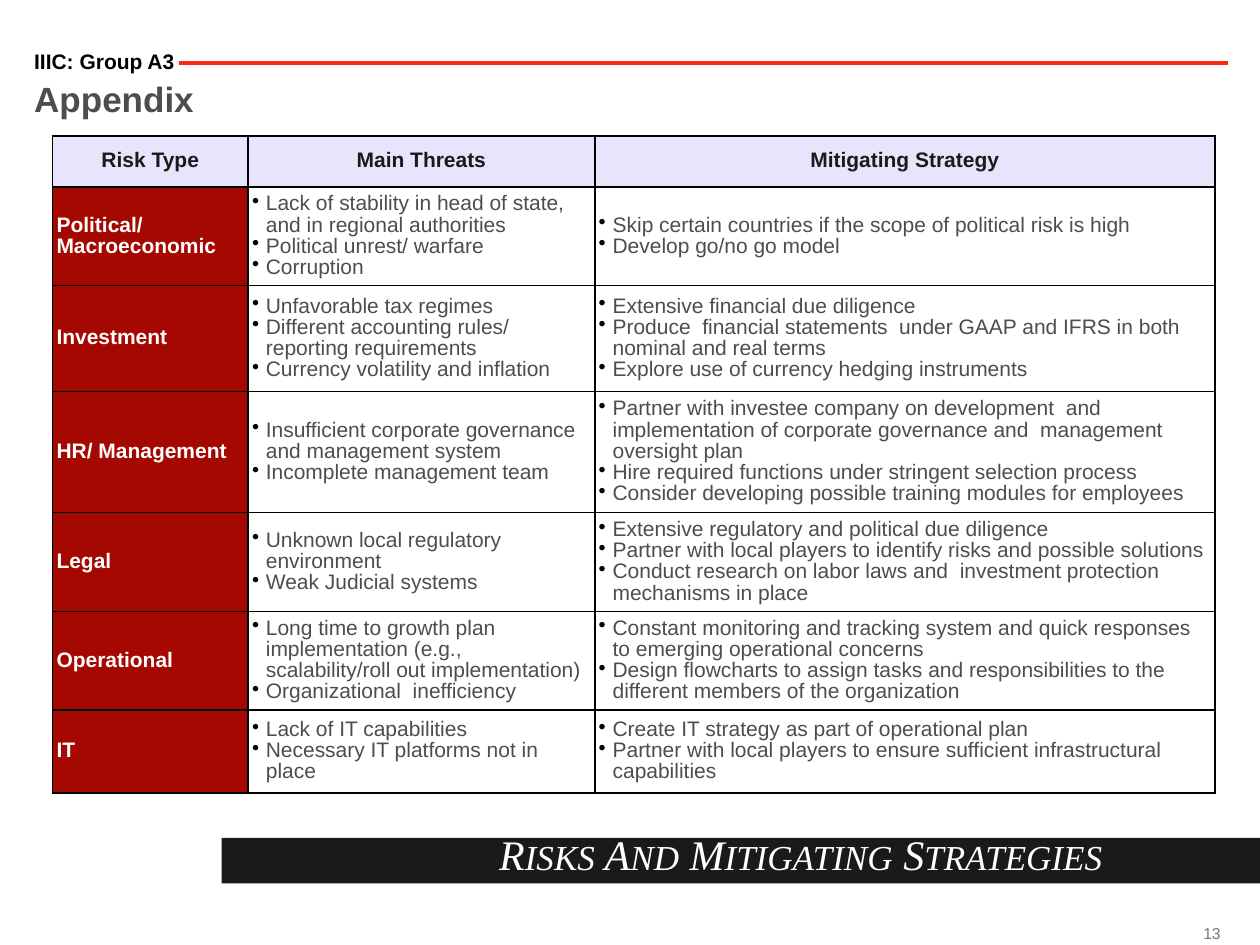
from dataclasses import dataclass

from lxml import etree
from pptx import Presentation
from pptx.dml import color
from pptx.enum import shapes, text
from pptx.oxml import ns
from pptx.util import Cm, Pt


@dataclass(frozen=True)
class Theme:
    sans: str = "Arial"
    serif: str = "Times New Roman"
    black: str = "000000"
    white: str = "FFFFFF"
    ink: str = "1A1A1A"
    grey: str = "4D4D4D"
    pale: str = "77787B"
    red: str = "FF2712"
    dark_red: str = "A40800"
    lilac: str = "E6E5FB"
    small: int = 9
    body: int = 12
    title: int = 20
    cap: int = 24
    edge: int = 1
    rule: float = 2.25
    lead: float = 0.9


THEME = Theme()
ALIGN = text.PP_ALIGN
WIDTHS = (3.94, 6.99, 12.5)
HEIGHTS = (1.03, 1.85, 2.13, 2.34, 1.85, 1.85, 1.67)
HEADS = ("Risk Type", "Main Threats", "Mitigating Strategy")
RISKS = (
    ("Political/ Macroeconomic",
     ("Lack of stability in head of state, and in regional authorities",
      "Political unrest/ warfare",
      "Corruption"),
     ("Skip certain countries if the scope of political risk is high",
      "Develop go/no go model")),
    ("Investment",
     ("Unfavorable tax regimes",
      "Different accounting rules/ reporting requirements",
      "Currency volatility and inflation"),
     ("Extensive financial due diligence",
      "Produce  financial statements  under GAAP and IFRS in both nominal and real terms",
      "Explore use of currency hedging instruments")),
    ("HR/ Management",
     ("Insufficient corporate governance and management system",
      "Incomplete management team"),
     ("Partner with investee company on development  and implementation of "
      "corporate governance and  management oversight plan",
      "Hire required functions under stringent selection process",
      "Consider developing possible training modules for employees")),
    ("Legal",
     ("Unknown local regulatory environment",
      "Weak Judicial systems"),
     ("Extensive regulatory and political due diligence",
      "Partner with local players to identify risks and possible solutions",
      "Conduct research on labor laws and  investment protection mechanisms in place")),
    ("Operational",
     ("Long time to growth plan implementation (e.g., scalability/roll out implementation)",
      "Organizational  inefficiency"),
     ("Constant monitoring and tracking system and quick responses to emerging "
      "operational concerns",
      "Design flowcharts to assign tasks and responsibilities to the different "
      "members of the organization")),
    ("IT",
     ("Lack of IT capabilities",
      "Necessary IT platforms not in place"),
     ("Create IT strategy as part of operational plan",
      "Partner with local players to ensure sufficient infrastructural capabilities")),
)


def rgb(code):
    return color.RGBColor.from_string(code)


def style(run, size, tint, bold=False, face=THEME.sans):
    font = run.font
    font.name, font.size, font.bold = face, Pt(size), bold
    font.color.rgb = rgb(tint)


def add_node(parent, tag, **attrs):
    return etree.SubElement(parent, ns.qn(tag), attrs)


def add_text(slide, box, words, size, tint, bold=False, align=ALIGN.LEFT, lead=THEME.lead):
    frame = slide.shapes.add_textbox(*map(Cm, box)).text_frame
    frame.word_wrap = True
    frame.margin_left = frame.margin_right = frame.margin_top = frame.margin_bottom = 0
    frame.text = words
    para = frame.paragraphs[0]
    para.alignment, para.line_spacing = align, lead
    for run in para.runs:
        style(run, size, tint, bold)
    return frame


def add_caps(slide, box, words):
    para = add_text(slide, box, "", THEME.cap, THEME.white, align=ALIGN.RIGHT, lead=1.0).paragraphs[0]
    for i, word in enumerate(words.upper().split()):
        first = word[0] if i == 0 else " " + word[0]
        for part, size in ((first, THEME.cap), (word[1:], THEME.title)):
            run = para.add_run()
            run.text = part
            style(run, size, THEME.white, face=THEME.serif)
            run.font.italic = True


def add_band(slide, box):
    band = slide.shapes.add_shape(shapes.MSO_SHAPE.RECTANGLE, *map(Cm, box))
    band.shadow.inherit = False
    band.fill.solid()
    band.fill.fore_color.rgb = rgb(THEME.ink)
    band.line.fill.background()


def add_rule(slide, left, right, top):
    rule = slide.shapes.add_connector(
        shapes.MSO_CONNECTOR.STRAIGHT, Cm(left), Cm(top), Cm(right), Cm(top))
    rule.line.color.rgb = rgb(THEME.red)
    rule.line.width = Pt(THEME.rule)
    add_node(rule._element.spPr, "a:effectLst")


def add_edges(cell):
    props = cell._tc.get_or_add_tcPr()
    for side in ("a:lnL", "a:lnR", "a:lnT", "a:lnB"):
        edge = add_node(props, side, w=str(Pt(THEME.edge)))
        add_node(add_node(edge, "a:solidFill"), "a:srgbClr", val=THEME.black)


def add_bullet(para):
    props = para._p.get_or_add_pPr()
    props.set("marL", str(Cm(0.28)))
    props.set("indent", str(Cm(-0.28)))
    add_node(add_node(props, "a:buClr"), "a:srgbClr", val=THEME.black)
    add_node(props, "a:buChar", char="•")


def fill_cell(cell, lines, tint, back=None, bold=False, align=ALIGN.LEFT, pad=0.08, dots=False):
    add_edges(cell)
    if back:
        cell.fill.solid()
        cell.fill.fore_color.rgb = rgb(back)
    else:
        cell.fill.background()
    cell.vertical_anchor = text.MSO_ANCHOR.MIDDLE
    cell.margin_left = cell.margin_right = cell.margin_top = cell.margin_bottom = Cm(pad)
    cell.text_frame.text = "\n".join(lines)
    for para in cell.text_frame.paragraphs:
        para.alignment, para.line_spacing = align, THEME.lead
        if dots:
            add_bullet(para)
        for run in para.runs:
            style(run, THEME.body, tint, bold)


def add_risks(slide, left, top):
    table = slide.shapes.add_table(
        len(HEIGHTS), len(WIDTHS), Cm(left), Cm(top), Cm(sum(WIDTHS)), Cm(sum(HEIGHTS))).table
    table.first_row = table.horz_banding = False
    for col, width in zip(table.columns, WIDTHS):
        col.width = Cm(width)
    for row, height in zip(table.rows, HEIGHTS):
        row.height = Cm(height)
    for c, head in enumerate(HEADS):
        fill_cell(table.cell(0, c), [head], THEME.ink, THEME.lilac, True, ALIGN.CENTER, 0.03)
    for r, (risk, *lists) in enumerate(RISKS, 1):
        fill_cell(table.cell(r, 0), [risk], THEME.white, THEME.dark_red, True)
        for c, lines in enumerate(lists, 1):
            fill_cell(table.cell(r, c), lines, THEME.grey, dots=True)


def main():
    deck = Presentation()
    deck.slide_width, deck.slide_height = Cm(25.4), Cm(19.05)
    slide = deck.slides.add_slide(deck.slide_layouts[6])
    page = add_text(slide, (24.13, 18.64, 0.48, 0.36), "13", THEME.small, THEME.pale,
                    align=ALIGN.RIGHT, lead=1.0)
    page.word_wrap = False
    page.vertical_anchor = text.MSO_ANCHOR.MIDDLE
    add_band(slide, (4.47, 16.89, 20.93, 0.92))
    add_caps(slide, (3.1, 16.71, 19.12, 1.17), "Risks And Mitigating Strategies")
    add_rule(slide, 3.6, 24.75, 1.27)
    add_risks(slide, 1.06, 2.74)
    add_text(slide, (0.69, 1.04, 3.58, 0.46), "IIIC: Group A3", THEME.body, THEME.black, True)
    add_text(slide, (0.69, 1.65, 24.03, 1.73), "Appendix", THEME.title, THEME.grey, True)
    deck.save("out.pptx")


if __name__ == "__main__":
    main()
